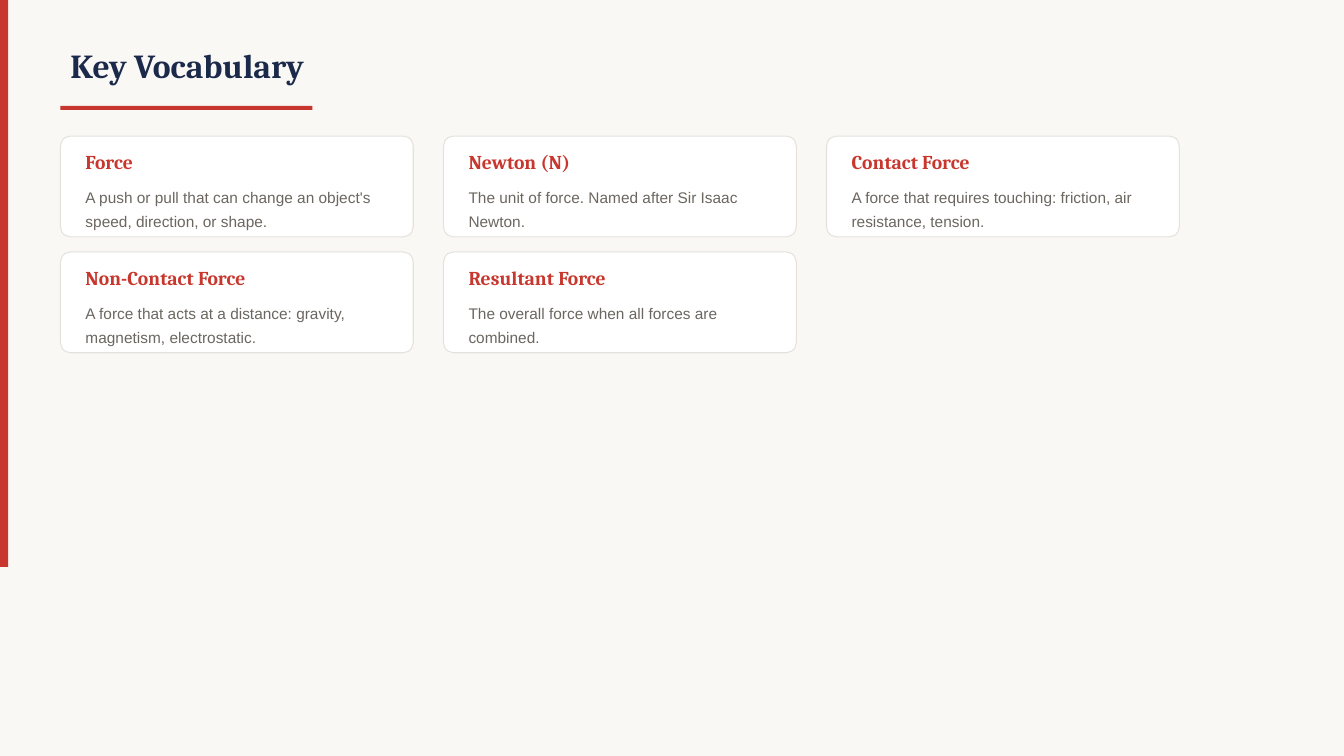
from pptx import Presentation
from pptx.dml.color import RGBColor
from pptx.enum.shapes import MSO_SHAPE as Shape
from pptx.enum.text import MSO_ANCHOR as Anchor
from pptx.util import Pt

RED, NAVY, GRAY = "C8372D", "1B2A4A", "6B6660"
PAPER, WHITE, EDGE = "FAF8F5", "FFFFFF", "E5E2DC"

TITLE = {"size": Pt(24), "name": "Cambria", "bold": True}
TERM = {"size": Pt(14), "name": "Cambria", "bold": True}
BODY = {"size": Pt(11), "name": "Arial"}

COLS = 3
LEFT, TOP = 43.2, 97.2
STEP_X, STEP_Y = 273.6, 82.8

WORDS = [
    ("Force", "A push or pull that can change an object's speed, direction, or shape."),
    ("Newton (N)", "The unit of force. Named after Sir Isaac Newton."),
    ("Contact Force", "A force that requires touching: friction, air resistance, tension."),
    ("Non-Contact Force", "A force that acts at a distance: gravity, magnetism, electrostatic."),
    ("Resultant Force", "The overall force when all forces are combined."),
]


def paint(fill, color):
    fill.solid()
    fill.fore_color.rgb = RGBColor.from_string(color)


def add_box(slide, kind, box, color, edge=None):
    shape = slide.shapes.add_shape(kind, *map(Pt, box))
    shape.shadow.inherit = False
    paint(shape.fill, color)
    if edge:
        paint(shape.line.fill, edge)
        shape.line.width = Pt(0.75)
    else:
        shape.line.fill.background()
    return shape


def add_text(slide, box, text, style, color, spacing=None):
    frame = slide.shapes.add_textbox(*map(Pt, box)).text_frame
    frame.word_wrap = True
    frame.vertical_anchor = Anchor.MIDDLE
    para = frame.paragraphs[0]
    para.line_spacing = spacing
    run = para.add_run()
    run.text = text
    for key, value in style.items():
        setattr(run.font, key, value)
    paint(run.font.fill, color)


def add_card(slide, x, y, term, meaning):
    card = add_box(slide, Shape.ROUNDED_RECTANGLE, (x, y, 252, 72), WHITE, EDGE)
    card.adjustments[0] = 0.1
    add_text(slide, (x + 10.8, y + 5.76, 230.4, 25.2), term, TERM, RED)
    add_text(slide, (x + 10.8, y + 32.4, 230.4, 36), meaning, BODY, GRAY, 1.3)


def main():
    deck = Presentation()
    deck.slide_width, deck.slide_height = Pt(960), Pt(540)
    slide = deck.slides.add_slide(deck.slide_layouts[6])
    paint(slide.background.fill, PAPER)

    add_box(slide, Shape.RECTANGLE, (0, 0, 5.76, 405), RED)
    add_text(slide, (LEFT, 21.6, 720, 50.4), "Key Vocabulary", TITLE, NAVY)
    add_box(slide, Shape.RECTANGLE, (LEFT, 75.6, 180, 2.88), RED)

    for i, (term, meaning) in enumerate(WORDS):
        row, col = divmod(i, COLS)
        add_card(slide, LEFT + col * STEP_X, TOP + row * STEP_Y, term, meaning)

    deck.save("out.pptx")


if __name__ == "__main__":
    main()
